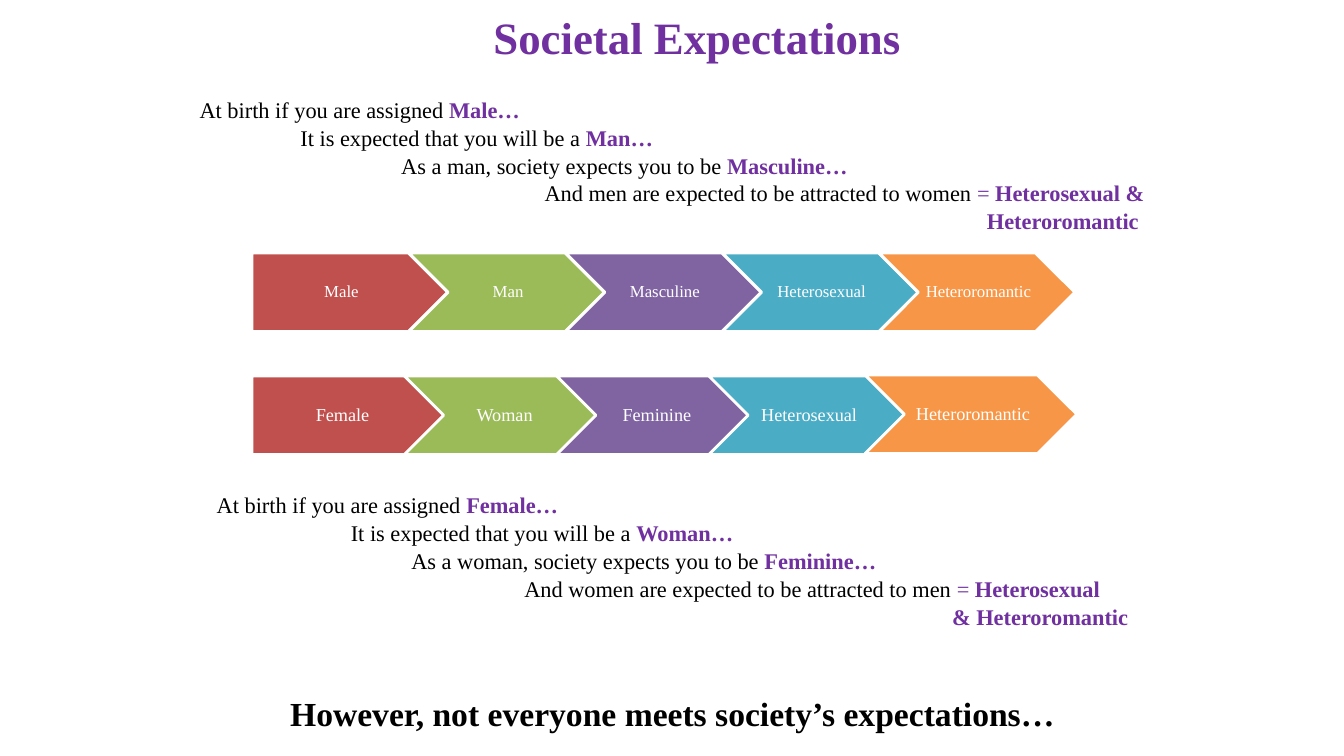
from pptx import Presentation
from pptx.dml.color import RGBColor
from pptx.enum.shapes import MSO_SHAPE
from pptx.enum.text import MSO_ANCHOR, PP_ALIGN
from pptx.util import Inches, Pt

PENTAGON, CHEVRON = MSO_SHAPE.PENTAGON, MSO_SHAPE.CHEVRON
TOP, MIDDLE = MSO_ANCHOR.TOP, MSO_ANCHOR.MIDDLE
LEFT, CENTER, RIGHT = PP_ALIGN.LEFT, PP_ALIGN.CENTER, PP_ALIGN.RIGHT

THEME = {
    "font": "Times New Roman",
    "purple": "7030A0", "black": "000000", "white": "FFFFFF",
    "steps": ["C0504D", "9BBB59", "8064A2", "4BACC6", "F79646"],
    "title": 32, "body": 16, "closing": 24,
    "leading": 1.04,
}

# Run styles: (colour, bold)
PLAIN, SIGN = ("black", False), ("purple", False)
KEY, STRONG = ("purple", True), ("black", True)

# Paragraphs: (indent, alignment, size, space before in points, runs)
MALE_TEXT = [
    (0.5, CENTER, "title", 0, [("Societal Expectations", KEY)]),
    (0, LEFT, "body", 22, [("At birth if you are assigned ", PLAIN), ("Male…", KEY)]),
    (1, LEFT, "body", 0, [("It is expected that you will be a ", PLAIN), ("Man…", KEY)]),
    (2, LEFT, "body", 0, [("As a man, society expects you to be ", PLAIN),
                          ("Masculine…", KEY)]),
    (3.3, RIGHT, "body", 0, [("And men are expected to be attracted to women ", PLAIN),
                             ("= ", SIGN), ("Heterosexual & Heteroromantic ", KEY)]),
]
FEMALE_TEXT = [
    (0, LEFT, "body", 0, [("At birth if you are assigned ", PLAIN), ("Female…", KEY)]),
    (1.33, LEFT, "body", 0, [("It is expected that you will be a ", PLAIN),
                             ("Woman…", KEY)]),
    (1.93, LEFT, "body", 0, [("As a woman, society expects you to be ", PLAIN),
                             ("Feminine…", KEY)]),
    (3.05, LEFT, "body", 0, [("And women are expected to be attracted to men ", PLAIN),
                             ("= ", SIGN), ("Heterosexual", KEY)]),
    (0, RIGHT, "body", 0, [("& Heteroromantic", KEY)]),
    (0, CENTER, "closing", 44,
     [("However, not everyone meets society’s expectations…", STRONG)]),
]
# Text blocks: (left, top, width, height, top inset, paragraphs)
BLOCKS = [
    (1.98, 0.03, 9.37, 2.52, 0.05, MALE_TEXT),
    (2.15, 4.84, 9.04, 2.66, 0.02, FEMALE_TEXT),
]

ROW_LEFT, STEP_HEIGHT = 2.5, 0.78
ROWS = [
    {"labels": ["Male", "Man", "Masculine", "Heterosexual", "Heteroromantic"],
     "top": 2.51, "width": 1.94, "pitch": 1.555, "size": 12, "inset": 0.05},
    {"labels": ["Female", "Woman", "Feminine", "Heterosexual", "Heteroromantic"],
     "top": 3.73, "width": 1.95, "pitch": 1.51, "size": 13, "inset": 0.06,
     "last": (8.58, 3.72, 2.1)},
]


def rgb(name):
    return RGBColor.from_string(THEME.get(name, name))


def style_run(r, size, color, bold=False):
    r.font.name = THEME["font"]
    r.font.size = Pt(size)
    r.font.bold = bold
    r.font.color.rgb = rgb(color)


def set_frame(tf, anchor, left, top, right, bottom):
    tf.word_wrap = True
    tf.vertical_anchor = anchor
    tf.margin_left, tf.margin_top = Inches(left), Inches(top)
    tf.margin_right, tf.margin_bottom = Inches(right), Inches(bottom)


def add_block(s, left, top, width, height, inset, paragraphs):
    box = s.shapes.add_textbox(Inches(left), Inches(top), Inches(width), Inches(height))
    tf = box.text_frame
    set_frame(tf, TOP, 0, inset, 0, 0)
    for i, (indent, align, size, before, runs) in enumerate(paragraphs):
        p = tf.add_paragraph() if i else tf.paragraphs[0]
        p.alignment = align
        p.space_before = Pt(before)
        p.line_spacing = THEME["leading"]
        p._p.get_or_add_pPr().set("marL", str(Inches(indent)))
        for text, (color, bold) in runs:
            r = p.add_run()
            r.text = text
            style_run(r, THEME[size], color, bold)


def add_step(group, kind, left, top, width, label, color, row):
    sp = group.shapes.add_shape(kind, Inches(left), Inches(top),
                                Inches(width), Inches(STEP_HEIGHT))
    sp.shadow.inherit = False
    sp.fill.solid()
    sp.fill.fore_color.rgb = rgb(color)
    sp.line.color.rgb = rgb("white")
    sp.line.width = Pt(2)
    set_frame(sp.text_frame, MIDDLE, row["inset"], 0.04, 0.02, 0.04)
    p = sp.text_frame.paragraphs[0]
    p.text = label
    p.alignment = CENTER
    p.line_spacing = 0.9
    style_run(p.runs[0], row["size"], "white")


def add_row(s, row):
    group = s.shapes.add_group_shape()
    for i, (label, color) in enumerate(zip(row["labels"], THEME["steps"])):
        place = (ROW_LEFT + i * row["pitch"], row["top"], row["width"])
        if i == len(row["labels"]) - 1:
            place = row.get("last", place)
        add_step(group, CHEVRON if i else PENTAGON, *place, label, color, row)


def main():
    prs = Presentation()
    prs.slide_width, prs.slide_height = Inches(13.33), Inches(7.5)
    s = prs.slides.add_slide(prs.slide_layouts[6])
    for block in BLOCKS:
        add_block(s, *block)
    for row in ROWS:
        add_row(s, row)
    prs.save("out.pptx")


if __name__ == "__main__":
    main()
